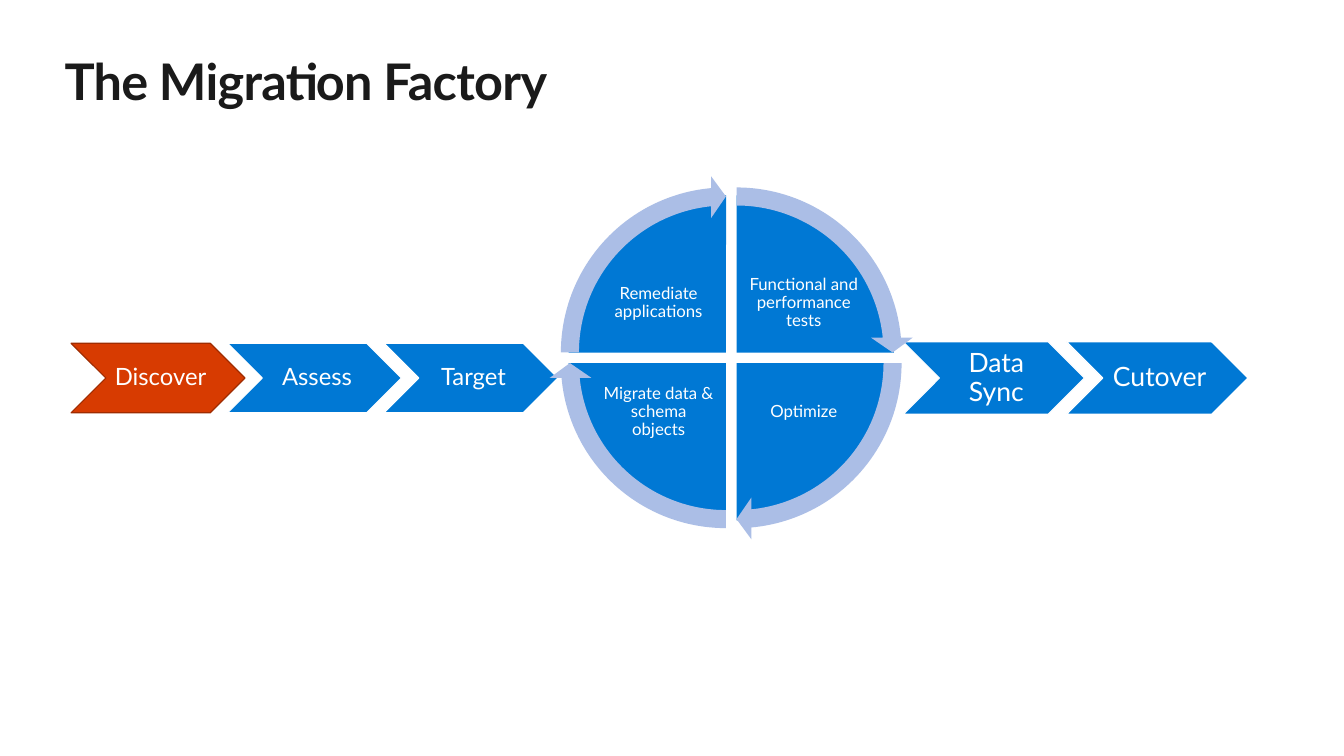
from dataclasses import dataclass

from pptx import Presentation
from pptx.dml.color import RGBColor
from pptx.enum.shapes import MSO_SHAPE
from pptx.enum.text import MSO_ANCHOR, MSO_AUTO_SIZE, PP_ALIGN
from pptx.shapes.autoshape import Shape
from pptx.slide import Slide
from pptx.util import Inches, Pt

CHEVRON, PIE, ARC_ARROW = MSO_SHAPE.CHEVRON, MSO_SHAPE.PIE, MSO_SHAPE.CIRCULAR_ARROW
MIDDLE, CENTER, GROW = MSO_ANCHOR.MIDDLE, PP_ALIGN.CENTER, MSO_AUTO_SIZE.SHAPE_TO_FIT_TEXT

INK = RGBColor(0x1A, 0x1A, 0x1A)
WHITE = RGBColor(0xFF, 0xFF, 0xFF)
BLUE = RGBColor(0x00, 0x78, 0xD4)
RED = RGBColor(0xD7, 0x3B, 0x01)
DARK_RED = RGBColor(0x9F, 0x2C, 0x01)
PALE_BLUE = RGBColor(0xAB, 0xBE, 0xE6)

FONT = "Lato"
WIDTH, HEIGHT = Inches(13.333), Inches(7.5)

# Wheel sizes, as shares of the slide height
WHEEL_X, WHEEL_Y = 0.5441 * WIDTH, 0.4733 * HEIGHT
HALF_GAP = 0.007 * HEIGHT
PIE_SIZE, ARROW_SIZE = 0.416 * HEIGHT, 0.468 * HEIGHT
LABEL_X, LABEL_Y = 0.096 * HEIGHT, 0.072 * HEIGHT
LABEL_WIDTH, LABEL_HEIGHT = 0.1533 * HEIGHT, 0.1133 * HEIGHT

# Angles in the unit of the shape adjustments
FULL_TURN, QUARTER_TURN = 216, 54
HEAD_ANGLE, BAND, HEAD = 3.275, 0.051, 0.059


@dataclass(frozen=True)
class Box:
    center_x: float
    center_y: float
    width: float
    height: float

    def frame(self) -> tuple[int, int, int, int]:
        return (round(self.center_x - self.width / 2), round(self.center_y - self.height / 2),
                round(self.width), round(self.height))


@dataclass(frozen=True)
class Step:
    text: str
    fill: RGBColor = BLUE
    line: RGBColor = WHITE


@dataclass(frozen=True)
class Chain:
    left: float    # share of the slide width
    height: float  # share of the slide height
    size: int
    steps: tuple[Step, ...]


@dataclass(frozen=True)
class Quadrant:
    text: str
    side_x: int
    side_y: int
    start: int


CHAINS = (
    Chain(0.0529, 0.092, 17, (Step("Discover", RED, DARK_RED), Step("Assess"), Step("Target"))),
    Chain(0.672, 0.096, 19, (Step("Data Sync"), Step("Cutover"))),
)
QUADRANTS = (
    Quadrant("Functional and performance tests", 1, -1, 162),
    Quadrant("Optimize", 1, 1, 0),
    Quadrant("Migrate data & schema objects", -1, 1, 54),
    Quadrant("Remediate applications", -1, -1, 108),
)


def add_figure(page: Slide, kind: MSO_SHAPE, box: Box, fill: RGBColor,
               adjustments: tuple[float, ...] = ()) -> Shape:
    figure = page.shapes.add_shape(kind, *box.frame())
    figure.shadow.inherit = False
    figure.fill.solid()
    figure.fill.fore_color.rgb = fill
    figure.line.fill.background()
    for index, value in enumerate(adjustments):
        figure.adjustments[index] = value
    return figure


def add_label(page: Slide, text: str, box: Box, size: int, left: float, inset: float) -> None:
    frame = page.shapes.add_textbox(*box.frame()).text_frame
    frame.word_wrap = True
    frame.vertical_anchor = MIDDLE
    frame.margin_left = Inches(left)
    frame.margin_top = frame.margin_right = frame.margin_bottom = Inches(inset)
    frame.text = text
    para = frame.paragraphs[0]
    para.alignment = CENTER
    para.line_spacing = 0.9
    font = para.runs[0].font
    font.name, font.size, font.color.rgb = FONT, Pt(size), WHITE


def add_title(page: Slide, text: str) -> None:
    box = Box(0.5 * WIDTH, 0.1073 * HEIGHT, 0.904 * WIDTH, 0.0813 * HEIGHT)
    frame = page.shapes.add_textbox(*box.frame()).text_frame
    frame.word_wrap = True
    frame.auto_size = GROW
    frame.margin_left = frame.margin_top = frame.margin_right = frame.margin_bottom = 0
    frame.text = text
    span = frame.paragraphs[0].runs[0]
    span.font.name, span.font.size, span.font.bold = FONT, Pt(36), True
    span.font.color.rgb = INK
    span.font._element.set("spc", "-50")


def add_chain(page: Slide, chain: Chain) -> None:
    height = chain.height * HEIGHT
    width = 2.5 * height
    for index, step in enumerate(chain.steps):
        center_x = chain.left * WIDTH + width / 2 + 0.9 * width * index
        chevron = add_figure(page, CHEVRON, Box(center_x, 0.5 * HEIGHT, width, height), step.fill)
        chevron.line.color.rgb = step.line
        chevron.line.width = Pt(0.85)
        label_box = Box(center_x, 0.5 * HEIGHT, 0.6 * width, height)
        add_label(page, step.text, label_box, chain.size, 0.07, 0.02)


def quadrant_box(quadrant: Quadrant, size: float) -> Box:
    return Box(WHEEL_X + quadrant.side_x * HALF_GAP, WHEEL_Y + quadrant.side_y * HALF_GAP,
               size, size)


def add_wheel(page: Slide) -> None:
    for quadrant in QUADRANTS:
        end = (quadrant.start + QUARTER_TURN) % FULL_TURN
        add_figure(page, PIE, quadrant_box(quadrant, PIE_SIZE), BLUE, (quadrant.start, end))
        label_box = Box(WHEEL_X + quadrant.side_x * LABEL_X, WHEEL_Y + quadrant.side_y * LABEL_Y,
                        LABEL_WIDTH, LABEL_HEIGHT)
        add_label(page, quadrant.text, label_box, 12, 0.02, 0.02)
    for quadrant in QUADRANTS:
        tip = quadrant.start + QUARTER_TURN - HEAD_ANGLE
        add_figure(page, ARC_ARROW, quadrant_box(quadrant, ARROW_SIZE), PALE_BLUE,
                   (BAND, HEAD_ANGLE, tip, quadrant.start, HEAD))


def main() -> None:
    deck = Presentation()
    deck.slide_width, deck.slide_height = WIDTH, HEIGHT
    page = deck.slides.add_slide(deck.slide_layouts[6])
    add_title(page, "The Migration Factory")
    for chain in CHAINS:
        add_chain(page, chain)
    add_wheel(page)
    deck.save("out.pptx")


if __name__ == "__main__":
    main()
